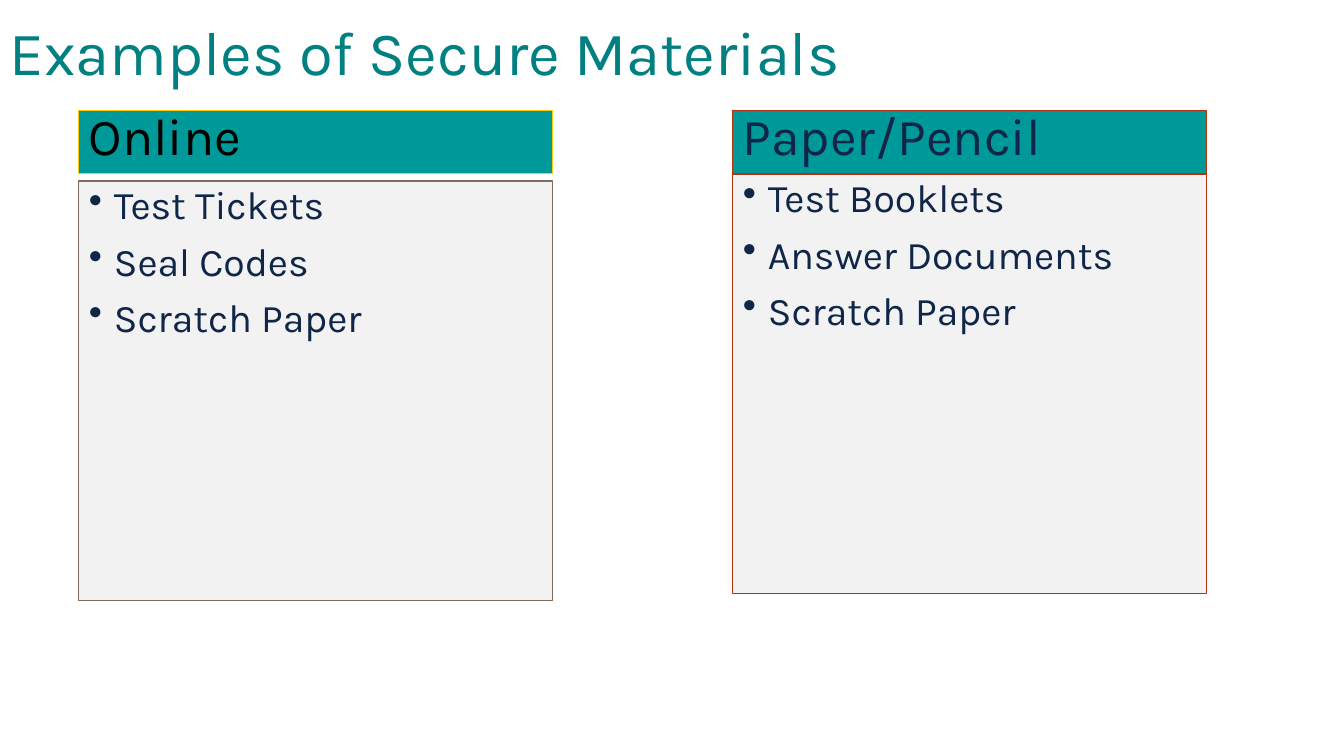
from pptx import Presentation
from pptx.dml.color import RGBColor
from pptx.enum.shapes import MSO_SHAPE
from pptx.enum.text import MSO_ANCHOR, PP_ALIGN
from pptx.oxml.xmlchemy import OxmlElement
from pptx.util import Pt

PX = 914400 / 100.8
THEME = {
    "font": "Karla",
    "title": "008080", "navy": "102649", "black": "000000",
    "teal": "009999", "panel": "F2F2F2",
    "rust": "B23214", "brown": "82695E", "gold": "FFCA08",
    "title_size": 44, "heading_size": 37, "item_size": 28,
}


def px(length):
    return round(length * PX)


def write(shape, lines, size, color, spacing, anchor=MSO_ANCHOR.TOP, bullets=False):
    frame = shape.text_frame
    frame.word_wrap = True
    frame.vertical_anchor = anchor
    frame.text = "\n".join(lines)
    for index, paragraph in enumerate(frame.paragraphs):
        paragraph.alignment = PP_ALIGN.LEFT
        paragraph.line_spacing = spacing
        if index:
            paragraph.space_before = Pt(10)
        if bullets:
            properties = paragraph._p.get_or_add_pPr()
            properties.set("marL", str(px(25)))
            properties.set("indent", str(-px(25)))
            bullet = OxmlElement("a:buChar")
            bullet.set("char", "•")
            properties.append(bullet)
        for run in paragraph.runs:
            run.font.name = THEME["font"]
            run.font.size = Pt(THEME[size])
            run.font.color.rgb = RGBColor.from_string(THEME[color])


presentation = Presentation()
presentation.slide_width, presentation.slide_height = px(1344), px(756)
slide = presentation.slides.add_slide(presentation.slide_layouts[6])

# Title
title = slide.shapes.add_textbox(0, 0, px(948), px(111))
write(title, ["Examples of Secure Materials"], "title_size", "title", 0.9, MSO_ANCHOR.MIDDLE)

# Columns: heading, its text and line colours, left, list top, list line colour, items
columns = [
    ("Paper/Pencil", "navy", "rust", 733, 174, "rust",
     ["Test Booklets", "Answer Documents", "Scratch Paper"]),
    ("Online", "black", "gold", 79, 181, "brown",
     ["Test Tickets", "Seal Codes", "Scratch Paper"]),
]
for heading, heading_color, heading_line, left, list_top, list_line, items in columns:
    # Each column is a list panel with a heading bar above it
    parts = [
        (list_top, 420, "panel", list_line, items, "item_size", "navy", 0.9, True),
        (111, 63, "teal", heading_line, [heading], "heading_size", heading_color, 0.8, False),
    ]
    for top, height, fill, line, lines, size, color, spacing, bullets in parts:
        panel = slide.shapes.add_shape(MSO_SHAPE.RECTANGLE, px(left), px(top), px(474), px(height))
        panel.shadow.inherit = False
        panel.fill.solid()
        panel.fill.fore_color.rgb = RGBColor.from_string(THEME[fill])
        panel.line.color.rgb = RGBColor.from_string(THEME[line])
        panel.line.width = Pt(0.75)
        write(panel, lines, size, color, spacing, bullets=bullets)

presentation.save("out.pptx")
